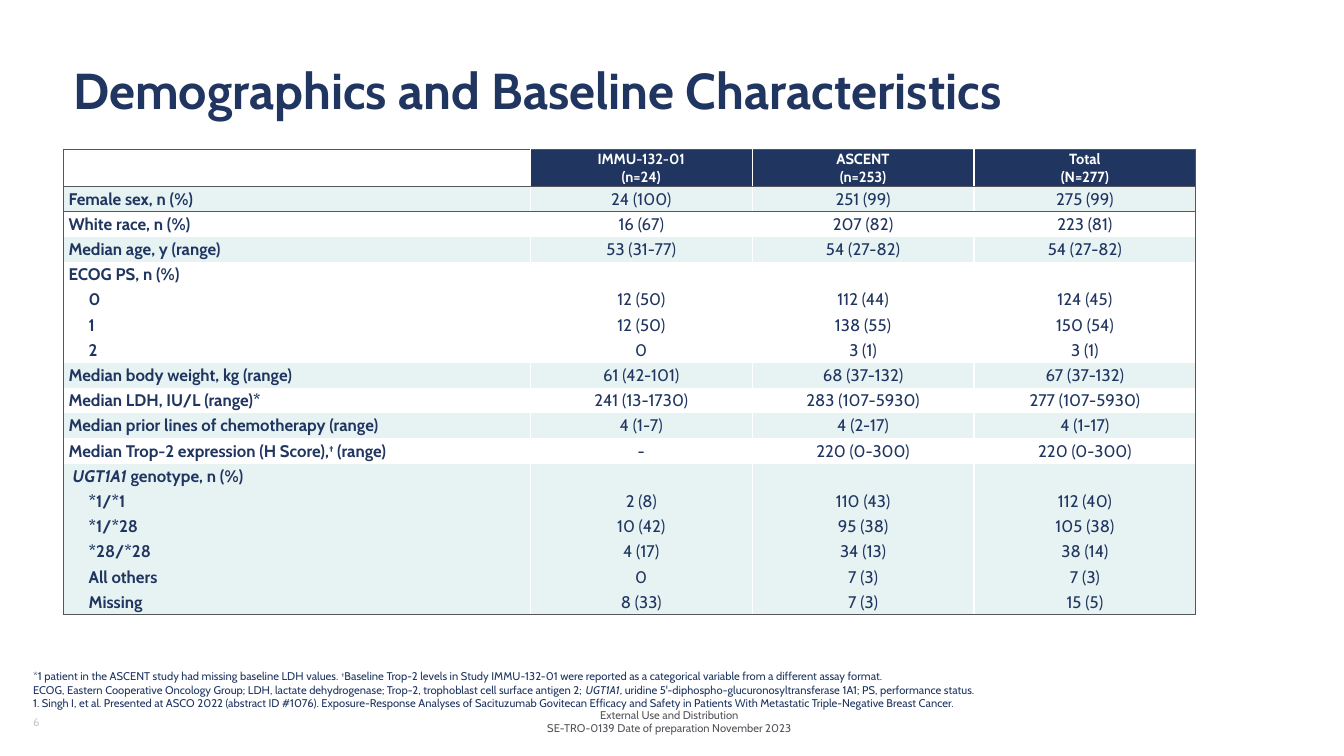
from dataclasses import dataclass

from lxml import etree
from pptx import Presentation
from pptx import util as u
from pptx.dml.color import RGBColor
from pptx.enum import text
from pptx.oxml.ns import qn


@dataclass(frozen=True)
class Theme:
    font: str = "Cabin"
    navy: str = "203661"
    tint: str = "E7F3F3"
    white: str = "FFFFFF"
    grey: str = "54565B"
    pale: str = "C6CAC6"
    title: float = 36
    body: float = 12
    header: float = 10.5
    small: float = 8


LEFT, CENTER = text.PP_ALIGN.LEFT, text.PP_ALIGN.CENTER
MIDDLE, BOTTOM = text.MSO_ANCHOR.MIDDLE, text.MSO_ANCHOR.BOTTOM
NO_TABLE_STYLE = "{2D5ABB26-0587-4C30-8999-92F81FD0307C}"

HEADERS = ["", "IMMU-132-01\n(n=24)", "ASCENT\n(n=253)", "Total\n(N=277)"]
GROUPS = [
    [("Female sex, n (%)", "24 (100)", "251 (99)", "275 (99)")],
    [("White race, n (%)", "16 (67)", "207 (82)", "223 (81)")],
    [("Median age, y (range)", "53 (31-77)", "54 (27-82)", "54 (27-82)")],
    [
        ("ECOG PS, n (%)", "", "", ""),
        ("0", "12 (50)", "112 (44)", "124 (45)"),
        ("1", "12 (50)", "138 (55)", "150 (54)"),
        ("2", "0", "3 (1)", "3 (1)"),
    ],
    [("Median body weight, kg (range)", "61 (42-101)", "68 (37-132)", "67 (37-132)")],
    [("Median LDH, IU/L (range)*", "241 (13-1730)", "283 (107-5930)", "277 (107-5930)")],
    [("Median prior lines of chemotherapy (range)", "4 (1-7)", "4 (2-17)", "4 (1-17)")],
    [("Median Trop-2 expression (H Score),† (range)", "-", "220 (0-300)", "220 (0-300)")],
    [
        ("UGT1A1 genotype, n (%)", "", "", ""),
        ("*1/*1", "2 (8)", "110 (43)", "112 (40)"),
        ("*1/*28", "10 (42)", "95 (38)", "105 (38)"),
        ("*28/*28", "4 (17)", "34 (13)", "38 (14)"),
        ("All others", "0", "7 (3)", "7 (3)"),
        ("Missing", "8 (33)", "7 (3)", "15 (5)"),
    ],
]
FOOTNOTES = [
    "*1 patient in the ASCENT study had missing baseline LDH values. †Baseline Trop-2 levels in "
    "Study IMMU-132-01 were reported as a categorical variable from a different assay format.\n"
    "ECOG, Eastern Cooperative Oncology Group; LDH, lactate dehydrogenase; Trop-2, trophoblast "
    "cell surface antigen 2; UGT1A1, uridine 5'-diphospho-glucuronosyltransferase 1A1; "
    "PS, performance status.",
    "1. Singh I, et al. Presented at ASCO 2022 (abstract ID #1076). Exposure-Response Analyses of "
    "Sacituzumab Govitecan Efficacy and Safety in Patients With Metastatic Triple-Negative Breast "
    "Cancer.",
]


class SlideBuilder:
    def __init__(self, page, theme):
        self.page = page
        self.theme = theme

    def fill_paragraph(self, para, content, size, color, bold=False, align=LEFT, indent=0.0):
        para.alignment = align
        if indent:
            para._p.get_or_add_pPr().set("marL", str(u.Inches(indent)))
        font = para.font
        font.name, font.size, font.bold = self.theme.font, u.Pt(size), bold
        font.color.rgb = RGBColor.from_string(color)
        for mark in ("†", "UGT1A1", "\n"):
            content = content.replace(mark, f"|{mark}|")
        for part in filter(None, content.split("|")):
            if part == "\n":
                para.add_line_break()
                continue
            span = para.add_run()
            span.text = part
            if part == "†":
                span.font._element.set("baseline", "30000")
            elif part == "UGT1A1":
                span.font.italic = True

    def text(self, area, lines, size, color, bold=False, align=LEFT, anchor=MIDDLE, spacing=None):
        frame = self.page.shapes.add_textbox(*map(u.Inches, area)).text_frame
        frame.word_wrap = True
        frame.vertical_anchor = anchor
        for index, line in enumerate(lines):
            para = frame.add_paragraph() if index else frame.paragraphs[0]
            para.line_spacing = spacing
            self.fill_paragraph(para, line, size, color, bold, align)

    def borders(self, cell, **colors):
        properties = cell._tc.get_or_add_tcPr()
        for side in "LRTB":
            if side in colors:
                line = etree.SubElement(properties, qn(f"a:ln{side}"), w=str(u.Pt(1)))
                fill = etree.SubElement(line, qn("a:solidFill"))
                etree.SubElement(fill, qn("a:srgbClr"), val=colors[side])

    def cell(self, cell, content, fill, margins, **style):
        cell.margin_left = cell.margin_right = u.Inches(margins[0])
        cell.margin_top = cell.margin_bottom = u.Inches(margins[1])
        cell.vertical_anchor = MIDDLE
        cell.fill.solid()
        cell.fill.fore_color.rgb = RGBColor.from_string(fill)
        self.fill_paragraph(cell.text_frame.paragraphs[0], content, **style)

    def table(self, left, top, widths, header_height, row_height):
        theme = self.theme
        rows = [(HEADERS, theme.navy, False)]
        for number, group in enumerate(GROUPS):
            band = theme.white if number % 2 else theme.tint
            rows += [(values, band, place > 0) for place, values in enumerate(group)]
        heights = [header_height] + [row_height] * (len(rows) - 1)
        area = map(u.Inches, (left, top, sum(widths), sum(heights)))
        grid = self.page.shapes.add_table(len(rows), len(widths), *area).table
        grid._tbl.tblPr.find(qn("a:tableStyleId")).text = NO_TABLE_STYLE
        for column, width in zip(grid.columns, widths):
            column.width = u.Inches(width)
        last_row, last_column = len(rows) - 1, len(widths) - 1
        for r, (values, band, nested) in enumerate(rows):
            grid.rows[r].height = u.Inches(heights[r])
            for c, value in enumerate(values):
                cell = grid.cell(r, c)
                sides = {
                    "L": theme.grey if c == 0 else theme.white,
                    "R": theme.grey if c == last_column else theme.white,
                }
                if r <= 1:
                    sides["T"] = theme.grey
                if r in (0, last_row):
                    sides["B"] = theme.grey
                self.borders(cell, **sides)
                if r == 0:
                    fill = band if c else theme.white
                    self.cell(cell, value, fill, (0.1, 0.01), size=theme.header,
                              color=theme.white, bold=True, align=CENTER)
                else:
                    shift = 0.2 if nested else 0.04 if value.startswith("UGT1A1") else 0
                    self.cell(cell, value, band, (0.05, 0.02), size=theme.body,
                              color=theme.navy, bold=c == 0, align=CENTER if c else LEFT,
                              indent=0 if c else shift)


def main():
    deck = Presentation()
    deck.slide_width, deck.slide_height = u.Inches(13.33), u.Inches(7.5)
    theme = Theme()
    slide = SlideBuilder(deck.slides.add_slide(deck.slide_layouts[6]), theme)
    slide.text((5.14, 7, 3, 0.32),
               ["External Use and Distribution", "SE-TRO-0139 Date of preparation November 2023"],
               theme.small, theme.grey, align=CENTER)
    slide.text((0.63, 0.4, 12, 1.08), ["Demographics and Baseline Characteristics"],
               theme.title, theme.navy, bold=True, spacing=0.8)
    slide.text((0.23, 7, 3, 0.32), ["6"], theme.small, theme.pale)
    slide.table(0.63, 1.48, [4.63, 2.2, 2.2, 2.2], 0.37, 0.25)
    slide.text((0.23, 6.36, 12.41, 0.73), FOOTNOTES, theme.small, theme.navy, anchor=BOTTOM)
    deck.save("out.pptx")


if __name__ == "__main__":
    main()
